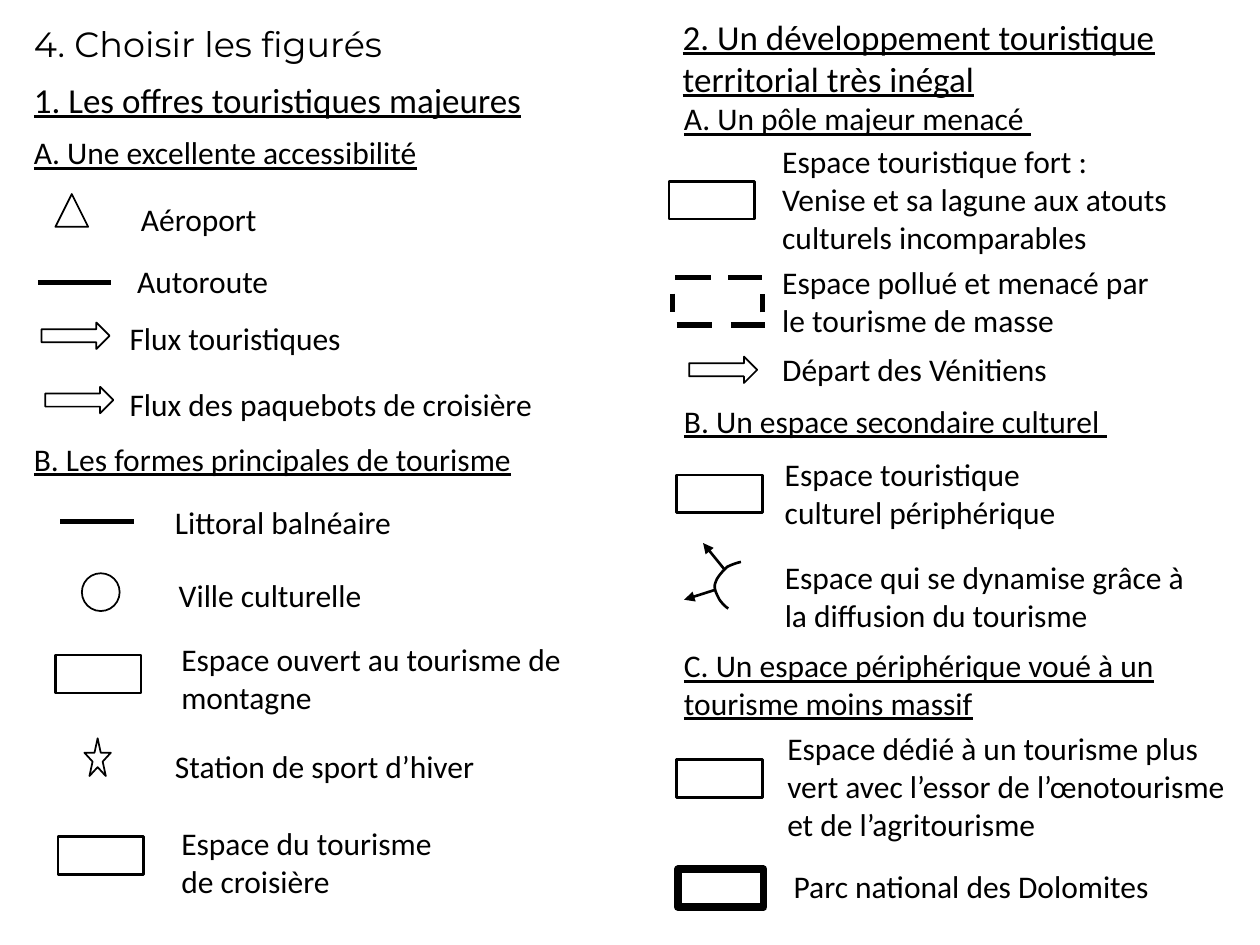
from dataclasses import dataclass

from lxml.etree import SubElement
from pptx import Presentation
from pptx.dml.color import RGBColor
from pptx.enum.shapes import MSO_CONNECTOR, MSO_SHAPE
from pptx.enum.text import MSO_AUTO_SIZE
from pptx.oxml.ns import qn
from pptx.util import Inches, Pt


@dataclass(frozen=True)
class Theme:
    ink: RGBColor = RGBColor(0, 0, 0)
    body_font: str = "Calibri"
    title_font: str = "Montserrat"
    heading_size: Pt = Pt(20)
    body_size: Pt = Pt(18)
    thin: Pt = Pt(1)
    medium: Pt = Pt(1.5)
    thick: Pt = Pt(3)
    heavy: Pt = Pt(4.5)


theme = Theme()
deck = Presentation()
deck.slide_width, deck.slide_height = Inches(10), Inches(7.5)
page = deck.slides.add_slide(deck.slide_layouts[6])


def add_text(left, top, width, height, text, font_format):
    box = page.shapes.add_textbox(*map(Inches, (left, top, width, height)))
    frame = box.text_frame
    frame.word_wrap = True
    frame.auto_size = MSO_AUTO_SIZE.SHAPE_TO_FIT_TEXT
    frame.text = text
    for para in frame.paragraphs:
        for span in para.runs:
            for name, value in font_format.items():
                setattr(span.font, name, value)
            span.font.color.rgb = theme.ink


def add_line(start_x, start_y, end_x, end_y, width, arrow=False):
    line = page.shapes.add_connector(
        MSO_CONNECTOR.STRAIGHT, *map(Inches, (start_x, start_y, end_x, end_y)))
    line.line.color.rgb = theme.ink
    line.line.width = width
    if arrow:
        SubElement(line.line._get_or_add_ln(), qn("a:tailEnd"), type="triangle")
    SubElement(line._element.spPr, qn("a:effectLst"))


# Text formats
label = {"name": theme.body_font, "size": theme.body_size}
subheading = {**label, "underline": True}
heading = {**subheading, "size": theme.heading_size}
title = {"name": theme.title_font, "size": theme.heading_size}

# Title and headings
for left, top, width, height, text, font_format in [
    (0.17, 0.13, 4.21, 0.44, "4. Choisir les figurés", title),
    (0.17, 0.57, 4.21, 0.44, "1. Les offres touristiques majeures", heading),
    (0.17, 1.01, 3.77, 0.4, "A. Une excellente accessibilité", subheading),
    (0.17, 3.44, 4.41, 0.4, "B. Les formes principales de tourisme", subheading),
    (5.32, 0.07, 4.21, 0.77,
     "2. Un développement touristique territorial très inégal", heading),
    (5.33, 0.74, 3.77, 0.4, "A. Un pôle majeur menacé ", subheading),
    (5.33, 3.14, 4.41, 0.4, "B. Un espace secondaire culturel ", subheading),
    (5.33, 5.08, 4.41, 0.71,
     "C. Un espace périphérique voué à un tourisme moins massif", subheading),
]:
    add_text(left, top, width, height, text, font_format)

# Legend labels
for left, top, width, height, text in [
    (1.02, 1.54, 2.39, 0.4, "Aéroport"),
    (0.99, 2.03, 2.39, 0.4, "Autoroute"),
    (0.93, 2.48, 2.39, 0.4, "Flux touristiques"),
    (0.93, 3.01, 3.46, 0.4, "Flux des paquebots de croisière"),
    (1.29, 3.94, 2.39, 0.4, "Littoral balnéaire"),
    (1.32, 4.52, 2.66, 0.4, "Ville culturelle"),
    (1.34, 5.03, 3.29, 0.71, "Espace ouvert au tourisme de montagne"),
    (1.29, 5.88, 2.66, 0.4, "Station de sport d’hiver"),
    (1.34, 6.49, 2.39, 0.71, "Espace du tourisme de croisière"),
    (6.11, 1.08, 3.77, 1.01, "Espace touristique fort :\n"
     "Venise et sa lagune aux atouts culturels incomparables"),
    (6.11, 2.04, 3.12, 0.71, "Espace pollué et menacé par le tourisme de masse"),
    (6.11, 2.73, 3.12, 0.4, "Départ des Vénitiens"),
    (6.13, 3.56, 2.66, 0.71, "Espace touristique culturel périphérique"),
    (6.13, 4.38, 3.38, 0.71,
     "Espace qui se dynamise grâce à la diffusion du tourisme"),
    (6.15, 5.74, 3.77, 1.01, "Espace dédié à un tourisme plus vert avec l’essor "
     "de l’œnotourisme et de l’agritourisme"),
    (6.2, 6.83, 3.08, 0.4, "Parc national des Dolomites"),
]:
    add_text(left, top, width, height, text, label)

# Outlined symbols, grouped by kind: size, line width, positions
symbols = []
for preset, width, height, line_width, places in [
    (MSO_SHAPE.ISOSCELES_TRIANGLE, 0.26, 0.26, theme.thin, [(0.44, 1.54)]),
    (MSO_SHAPE.OVAL, 0.3, 0.3, theme.thin, [(0.65, 4.55)]),
    (MSO_SHAPE.STAR_5_POINT, 0.21, 0.3, theme.thin, [(0.67, 5.86)]),
    (MSO_SHAPE.RIGHT_ARROW, 0.54, 0.21, theme.thin,
     [(0.33, 2.56), (0.36, 3.07), (5.47, 2.83)]),
    (MSO_SHAPE.RECTANGLE, 0.68, 0.3, theme.medium,
     [(0.44, 5.2), (0.46, 6.64), (5.31, 1.44), (5.37, 3.77), (5.37, 6.03)]),
    (MSO_SHAPE.RECTANGLE, 0.68, 0.3, theme.heavy, [(5.38, 6.9)]),
]:
    for left, top in places:
        symbol = page.shapes.add_shape(
            preset, *map(Inches, (left, top, width, height)))
        symbols.append((symbol, line_width))

# Diffusion front: a curve sampled from its cubic segments
front_start = (5.88, 4.46)
front_segments = [
    ((5.84, 4.47), (5.81, 4.48), (5.77, 4.5)),
    ((5.74, 4.53), (5.69, 4.58), (5.68, 4.62)),
    ((5.66, 4.66), (5.68, 4.7), (5.7, 4.74)),
    ((5.71, 4.77), (5.76, 4.82), (5.78, 4.83)),
]
steps = 6
points = []
corner = front_start
for first, second, end in front_segments:
    for step in range(1, steps + 1):
        t = step / steps
        points.append(tuple(
            Inches((1 - t) ** 3 * a + 3 * (1 - t) ** 2 * t * b
                   + 3 * (1 - t) * t ** 2 * c + t ** 3 * d)
            for a, b, c, d in zip(corner, first, second, end)))
    corner = end
builder = page.shapes.build_freeform(*map(Inches, front_start))
builder.add_line_segments(points, close=False)
symbols.append((builder.convert_to_shape(), theme.medium))

for symbol, line_width in symbols:
    symbol.shadow.inherit = False
    symbol.fill.background()
    symbol.line.color.rgb = theme.ink
    symbol.line.width = line_width

# Motorway, seaside and the dashes around the polluted area
for ends in [
    (0.3, 2.24, 0.88, 2.24),
    (0.48, 4.14, 1.06, 4.14),
    (5.36, 2.2, 5.64, 2.2),
    (5.78, 2.2, 6.05, 2.2),
    (5.37, 2.58, 5.65, 2.58),
    (5.8, 2.58, 6.07, 2.58),
    (5.34, 2.33, 5.34, 2.48),
    (6.05, 2.48, 6.05, 2.33),
]:
    add_line(*ends, theme.thick)

# Diffusion arrows
for ends in [(5.75, 4.52, 5.58, 4.31), (5.68, 4.68, 5.43, 4.76)]:
    add_line(*ends, theme.medium, arrow=True)

deck.save("out.pptx")
